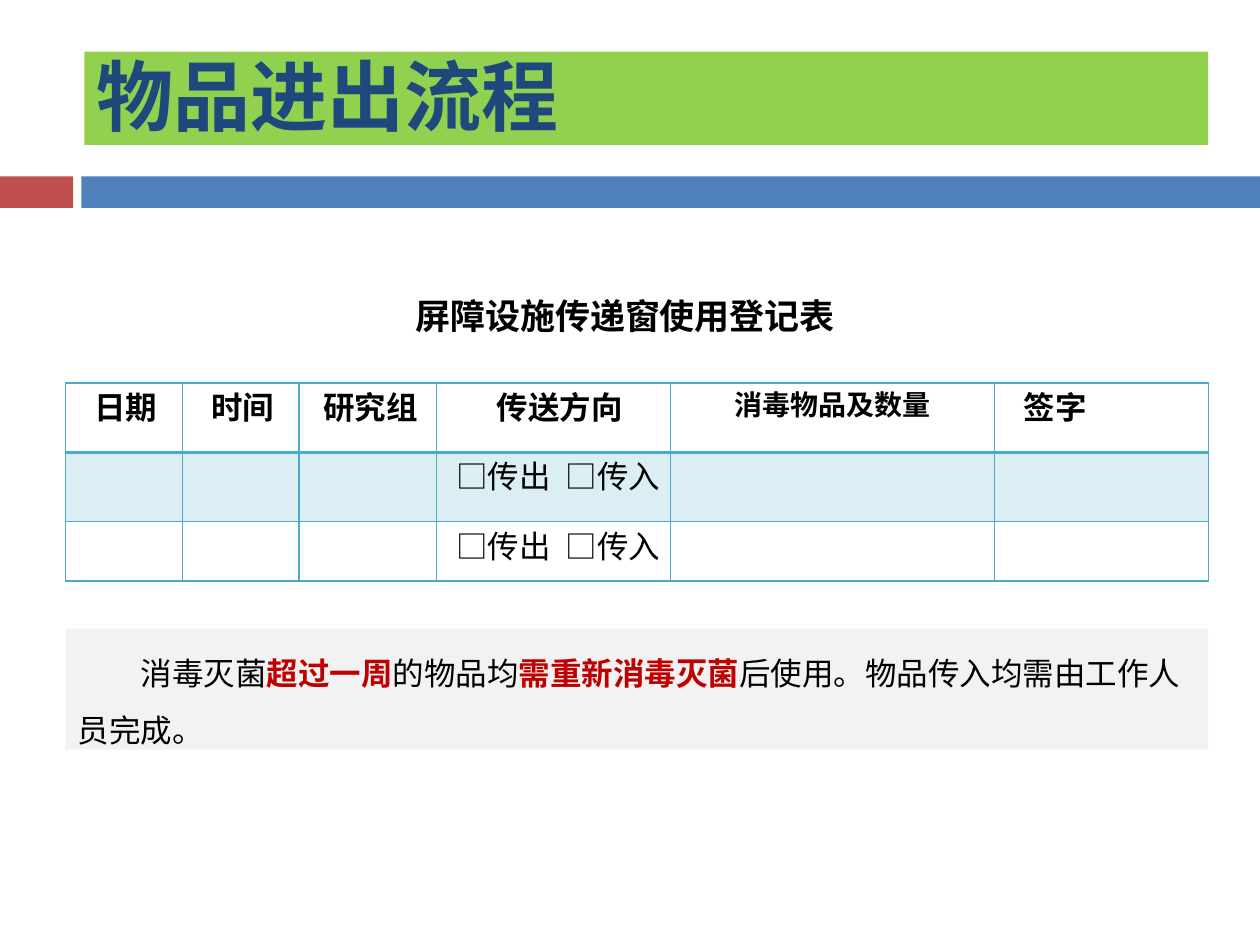
from dataclasses import dataclass

from lxml import etree
from pptx import Presentation
from pptx.dml.color import RGBColor
from pptx.enum.shapes import MSO_SHAPE
from pptx.enum.text import MSO_ANCHOR, MSO_AUTO_SIZE, PP_ALIGN
from pptx.oxml.ns import qn
from pptx.util import Pt

RECTANGLE = MSO_SHAPE.RECTANGLE
TOP, MIDDLE = MSO_ANCHOR.TOP, MSO_ANCHOR.MIDDLE
LEFT, CENTER = PP_ALIGN.LEFT, PP_ALIGN.CENTER
NO_AUTOSIZE = MSO_AUTO_SIZE.NONE

BLACK = RGBColor(0x00, 0x00, 0x00)
NAVY = RGBColor(0x1F, 0x48, 0x7C)
GREEN = RGBColor(0x92, 0xD0, 0x50)
RED = RGBColor(0xC0, 0x50, 0x4D)
BLUE = RGBColor(0x4F, 0x81, 0xBC)
TEAL = RGBColor(0x4B, 0xAC, 0xC6)
PALE_GRAY = RGBColor(0xF2, 0xF2, 0xF2)
ALERT = RGBColor(0xC0, 0x00, 0x00)

LATIN = "Calibri"
CHINESE = "Noto Sans CJK SC"
NO_MARGINS = (0, 0, 0, 0)


@dataclass
class Block:
    left: float
    top: float
    width: float
    height: float
    color: RGBColor


@dataclass
class Span:
    text: str
    color: RGBColor = BLACK
    bold: bool = False


@dataclass
class Column:
    heading: str
    width: float
    indent: float = 0
    size: float = 18
    align: PP_ALIGN = LEFT


STRIPES = [
    Block(0, 100.8, 41.8, 18, RED),
    Block(46.5, 100.8, 673.5, 18, BLUE),
]
COLUMNS = [
    Column("日期", 66.8, 16.6),
    Column("时间", 66.8, 16.6),
    Column("研究组", 78.4, 13.7),
    Column("传送方向", 133.8, 34.6),
    Column("消毒物品及数量", 185.2, size=16, align=CENTER),
    Column("签字", 122.2, 16.6),
]
ROW_HEIGHTS = [39.6, 39.6, 34]
DIRECTION_COLUMN = 3
NOTE = [
    Span("消毒灭菌"),
    Span("超过一周", ALERT, True),
    Span("的物品均"),
    Span("需重新消毒灭菌", ALERT, True),
    Span("后使用。物品传入均需由工作人员完成。"),
]


def write_text(frame, spans: list[Span], *, size: float, latin: str = LATIN,
               asian: str = CHINESE, align: PP_ALIGN = LEFT,
               line_spacing=None, first_indent: float = 0,
               tab: float = 0, tracking: float = 0) -> None:
    """Fill the first paragraph of a text frame with formatted spans."""
    para = frame.paragraphs[0]
    para.alignment = align
    if line_spacing is not None:
        para.line_spacing = line_spacing
    properties = para._p.get_or_add_pPr()
    if first_indent:
        properties.set("marL", "0")
        properties.set("indent", str(Pt(first_indent)))
    if tab:
        stops = etree.SubElement(properties, qn("a:tabLst"))
        etree.SubElement(stops, qn("a:tab"), pos=str(Pt(tab)), algn="l")
    for span in spans:
        run = para.add_run()
        run.text = span.text
        run.font.size = Pt(size)
        run.font.bold = span.bold
        run.font.color.rgb = span.color
        run.font.name = latin
        run_properties = run._r.get_or_add_rPr()
        etree.SubElement(run_properties, qn("a:ea"), typeface=asian)
        if tracking:
            run_properties.set("spc", str(round(tracking * 100)))


def set_frame(frame, margins: tuple, anchor: MSO_ANCHOR) -> None:
    frame.word_wrap = True
    frame.auto_size = NO_AUTOSIZE
    frame.vertical_anchor = anchor
    (frame.margin_left, frame.margin_top,
     frame.margin_right, frame.margin_bottom) = map(Pt, margins)


def add_block(page, block: Block):
    shape = page.shapes.add_shape(RECTANGLE, Pt(block.left), Pt(block.top),
                                  Pt(block.width), Pt(block.height))
    shape.shadow.inherit = False
    shape.fill.solid()
    shape.fill.fore_color.rgb = block.color
    shape.line.fill.background()
    return shape


def style_cell(cell, row: int) -> None:
    """Set the margins, borders and band fill of one table cell."""
    cell.margin_left = cell.margin_top = 0
    cell.margin_right = cell.margin_bottom = 0
    properties = cell._tc.get_or_add_tcPr()
    heavy_side = {0: "B", 1: "T"}.get(row)
    for side in "LRTB":
        width = 2 if side == heavy_side else 1
        border = etree.SubElement(properties, qn(f"a:ln{side}"), w=str(Pt(width)))
        paint = etree.SubElement(border, qn("a:solidFill"))
        etree.SubElement(paint, qn("a:srgbClr"), val=str(TEAL))
    if row == 1:
        cell.fill.solid()
        cell.fill.fore_color.rgb = TEAL
        color = properties.find(qn("a:solidFill")).find(qn("a:srgbClr"))
        etree.SubElement(color, qn("a:alpha"), val="20000")
    else:
        cell.fill.background()


def add_register(page) -> None:
    table = page.shapes.add_table(
        len(ROW_HEIGHTS), len(COLUMNS), Pt(37.4), Pt(218.9),
        Pt(sum(column.width for column in COLUMNS)), Pt(sum(ROW_HEIGHTS))).table
    for row, height in enumerate(ROW_HEIGHTS):
        table.rows[row].height = Pt(height)
        for index, column in enumerate(COLUMNS):
            table.columns[index].width = Pt(column.width)
            cell = table.cell(row, index)
            style_cell(cell, row)
            if row == 0:
                cell.margin_left = Pt(column.indent)
                write_text(cell.text_frame, [Span(column.heading, bold=True)],
                           size=column.size, align=column.align)
            elif index == DIRECTION_COLUMN:
                cell.margin_left = Pt(11.5)
                write_text(cell.text_frame, [Span("□传出\t□传入")],
                           size=18, tab=62.5)


def main() -> None:
    deck = Presentation()
    deck.slide_width, deck.slide_height = Pt(720), Pt(540)
    page = deck.slides.add_slide(deck.slide_layouts[5])

    # Stripes under the title
    for stripe in STRIPES:
        add_block(page, stripe)

    # Title
    title = page.shapes.title
    title.left, title.top = Pt(48.2), Pt(29.5)
    title.width, title.height = Pt(642.2), Pt(53.3)
    title.fill.solid()
    title.fill.fore_color.rgb = GREEN
    set_frame(title.text_frame, (7.2, 0, 0, 4), MIDDLE)
    write_text(title.text_frame, [Span("物品进出流程", NAVY, True)],
               size=44, latin=CHINESE)

    # Register heading and table
    heading = page.shapes.add_textbox(Pt(236.9), Pt(168.5), Pt(244.1), Pt(23.8))
    set_frame(heading.text_frame, (0.7, 0, 0, 0), TOP)
    write_text(heading.text_frame, [Span("屏障设施传递窗使用登记表", bold=True)],
               size=20, latin=CHINESE, line_spacing=Pt(23.8), tracking=-0.1)
    add_register(page)

    # Note
    note = add_block(page, Block(37.4, 359.3, 653, 69.1, PALE_GRAY))
    set_frame(note.text_frame, (7.2, 3.6, 7.2, 3.6), TOP)
    write_text(note.text_frame, NOTE, size=18, asian=LATIN,
               line_spacing=1.5, first_indent=36)

    deck.save("out.pptx")


if __name__ == "__main__":
    main()
